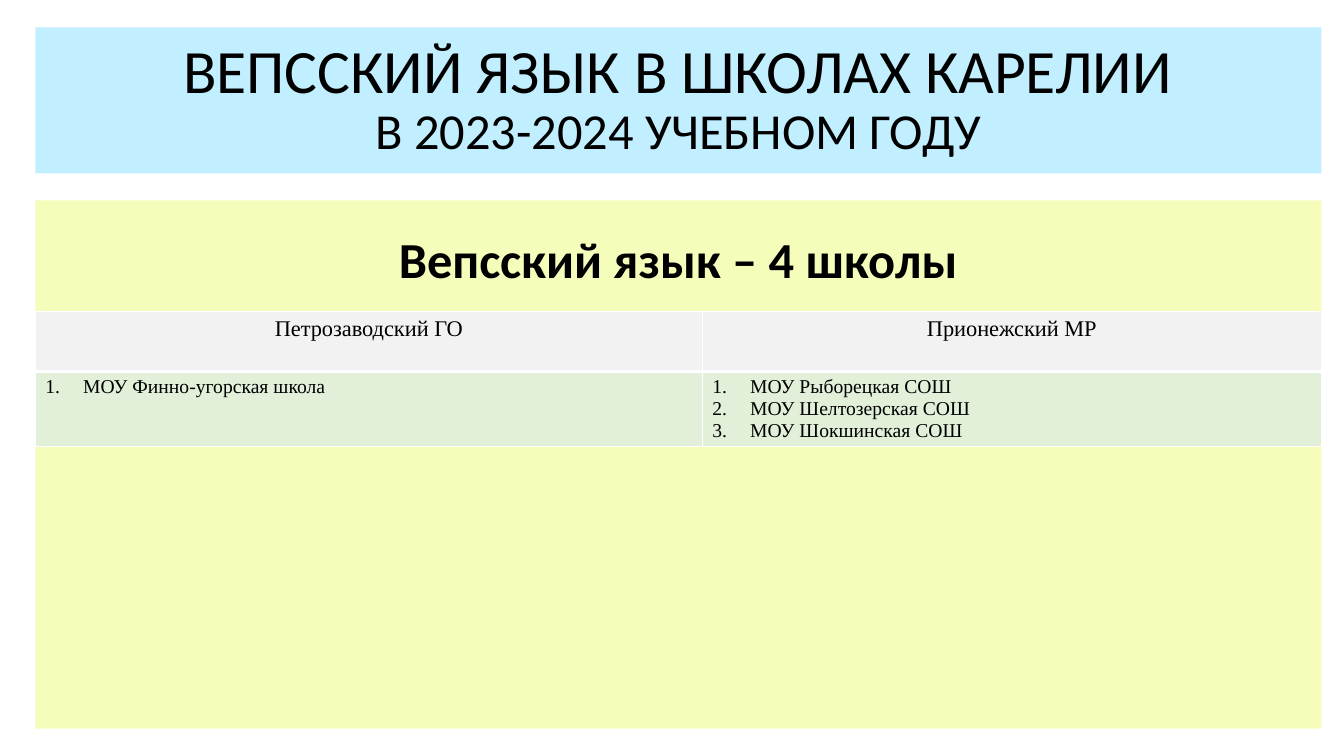
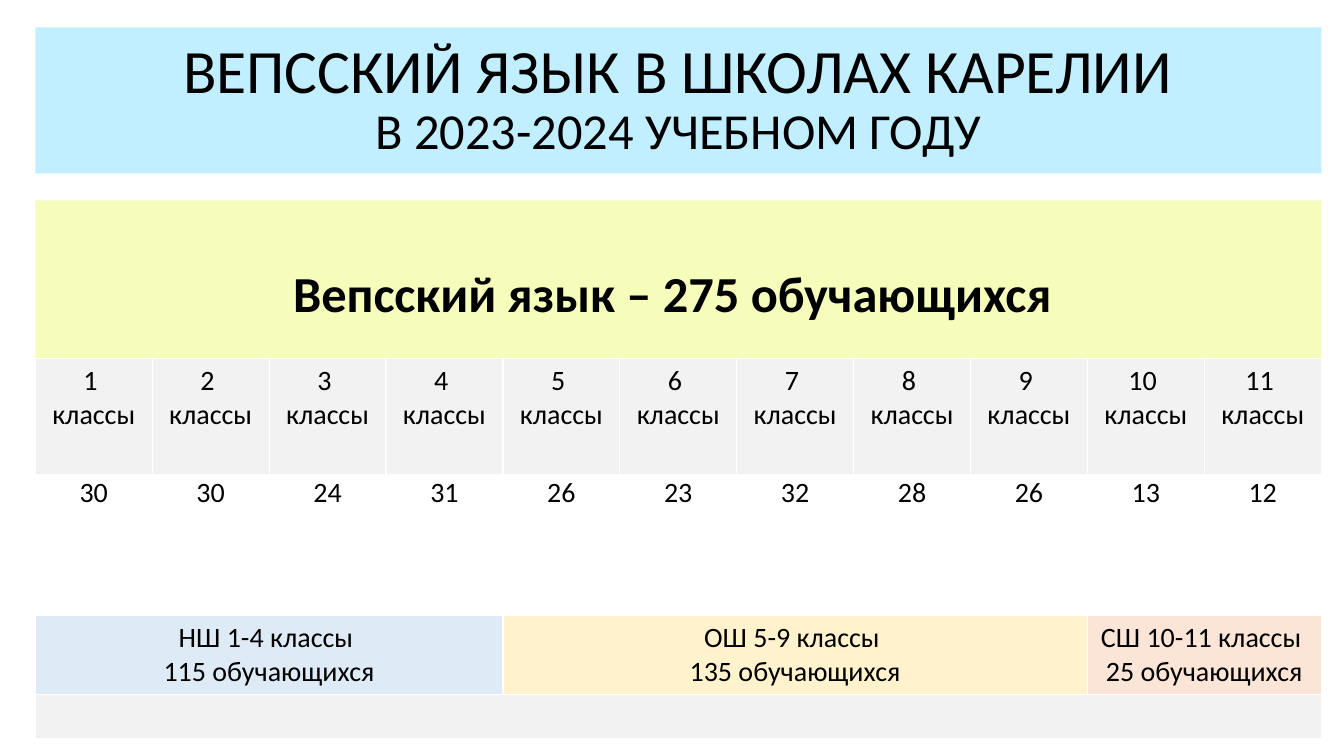
from pptx import Presentation
from pptx.dml.color import RGBColor
from pptx.enum.shapes import MSO_SHAPE
from pptx.enum.text import MSO_ANCHOR, MSO_AUTO_SIZE, PP_ALIGN
from pptx.oxml.ns import qn
from pptx.util import Cm, Pt
from lxml import etree

RECTANGLE = MSO_SHAPE.RECTANGLE
TOP, MIDDLE = MSO_ANCHOR.TOP, MSO_ANCHOR.MIDDLE
NO_AUTOFIT = MSO_AUTO_SIZE.NONE
LEFT, CENTER = PP_ALIGN.LEFT, PP_ALIGN.CENTER

BLACK = RGBColor(0x00, 0x00, 0x00)
WHITE = RGBColor(0xFF, 0xFF, 0xFF)
SKY = RGBColor(0xC1, 0xEF, 0xFF)
LEMON = RGBColor(0xF6, 0xFC, 0xBA)
GREY = RGBColor(0xF2, 0xF2, 0xF2)
GREEN = RGBColor(0xE2, 0xF0, 0xD9)
BLUE = RGBColor(0xDE, 0xEB, 0xF7)
AMBER = RGBColor(0xFF, 0xF2, 0xCC)
ROSE = RGBColor(0xFB, 0xE5, 0xD6)

SANS, SERIF = "Calibri", "Times New Roman"
MARGIN_LEFT, CONTENT_WIDTH = 0.89, 32.41
LIST_INDENT = Cm(0.95)
TITLE = "ВЕПССКИЙ ЯЗЫК В ШКОЛАХ КАРЕЛИИ\vВ 2023-2024 УЧЕБНОМ ГОДУ"


class Deck:
    """Shared style and the slide being built."""

    def __init__(self):
        self.presentation = Presentation()
        self.presentation.slide_width = Cm(33.87)
        self.presentation.slide_height = Cm(19.05)
        self.slide = None

    def new_slide(self, heading, heading_inset):
        layout = self.presentation.slide_layouts[5]
        self.slide = self.presentation.slides.add_slide(layout)
        self.title()
        self.panel(heading, heading_inset)

    def fill(self, target, color):
        target.fill.solid()
        target.fill.fore_color.rgb = color

    def format_run(self, run, size, font=SANS, bold=False):
        run.font.size = Pt(size)
        run.font.name = font
        run.font.bold = bold
        run.font.color.rgb = BLACK

    def title(self):
        title = self.slide.shapes.title
        title.left, title.top = Cm(MARGIN_LEFT), Cm(0.69)
        title.width, title.height = Cm(CONTENT_WIDTH), Cm(3.68)
        self.fill(title, SKY)
        frame = title.text_frame
        frame.text = TITLE
        frame.auto_size = NO_AUTOFIT
        frame.vertical_anchor = MIDDLE
        paragraph = frame.paragraphs[0]
        paragraph.alignment = CENTER
        paragraph.line_spacing = 0.9
        for run, size in zip(paragraph.runs, (44, 36)):
            self.format_run(run, size)

    def panel(self, heading, inset):
        panel = self.slide.shapes.add_shape(
            RECTANGLE, Cm(MARGIN_LEFT), Cm(5.05), Cm(CONTENT_WIDTH), Cm(13.31))
        panel.shadow.inherit = False
        panel.line.fill.background()
        self.fill(panel, LEMON)
        frame = panel.text_frame
        frame.text = heading
        frame.word_wrap = True
        frame.vertical_anchor = TOP
        frame.margin_top = Cm(inset)
        paragraph = frame.paragraphs[0]
        paragraph.alignment = CENTER
        paragraph.line_spacing = 0.9
        self.format_run(paragraph.runs[0], 36, bold=True)

    def table(self, top, widths, heights):
        frame = self.slide.shapes.add_table(
            len(heights), len(widths), Cm(MARGIN_LEFT), Cm(top),
            Cm(sum(widths)), Cm(sum(heights)))
        table = frame.table
        table.horz_banding = False
        for column, width in zip(table.columns, widths):
            column.width = Cm(width)
        for row, height in zip(table.rows, heights):
            row.height = Cm(height)
        for index, row in enumerate(table.rows):
            for cell in row.cells:
                self.borders(cell, bottom=3 if index == 0 else 1,
                             top=3 if index == 1 else 1)
        return table

    def borders(self, cell, top, bottom):
        properties = cell._tc.get_or_add_tcPr()
        sides = (("lnL", 1), ("lnR", 1), ("lnT", top), ("lnB", bottom))
        for position, (side, width) in enumerate(sides):
            line = etree.Element(qn(f"a:{side}"), w=str(Pt(width)))
            solid = etree.SubElement(line, qn("a:solidFill"))
            etree.SubElement(solid, qn("a:srgbClr"), val=str(WHITE))
            properties.insert(position, line)

    def cell(self, cell, text, color, size=20, font=SANS, numbered=False):
        self.fill(cell, color)
        cell.text_frame.text = text
        for paragraph in cell.text_frame.paragraphs:
            paragraph.alignment = LEFT if numbered else CENTER
            if numbered:
                self.number(paragraph)
            for run in paragraph.runs:
                self.format_run(run, size, font)

    def number(self, paragraph):
        properties = paragraph._p.get_or_add_pPr()
        properties.set("marL", str(LIST_INDENT))
        properties.set("indent", str(-LIST_INDENT))
        etree.SubElement(properties, qn("a:buAutoNum"), type="arabicPeriod")


def schools_slide(deck):
    deck.new_slide("Вепсский язык – 4 школы", 0.87)
    districts = (
        ("Петрозаводский ГО", "МОУ Финно-угорская школа"),
        ("Прионежский МР",
         "МОУ Рыборецкая СОШ\nМОУ Шелтозерская СОШ\nМОУ Шокшинская СОШ"),
    )
    table = deck.table(7.85, (16.81, 15.6), (1.51, 1.88))
    for column, (district, schools) in enumerate(districts):
        deck.cell(table.cell(0, column), district, GREY, 16, SERIF)
        deck.cell(table.cell(1, column), schools, GREEN, 14, SERIF, numbered=True)


def pupils_slide(deck):
    deck.new_slide("Вепсский язык – 275 обучающихся ", 1.72)
    pupils = (30, 30, 24, 31, 26, 23, 32, 28, 26, 13, 12)
    grades = len(pupils)
    table = deck.table(9.04, [CONTENT_WIDTH / grades] * grades,
                       (2.96, 3.51, 1.99, 1.12))

    # Pupils by grade
    for column, count in enumerate(pupils):
        deck.cell(table.cell(0, column), f"{column + 1} \nклассы", GREY)
        count_cell = table.cell(1, column)
        deck.cell(count_cell, str(count), WHITE)
        count_cell.margin_top = count_cell.margin_bottom = 0

    # Totals by school level
    levels = (("НШ", 1, 4, BLUE), ("ОШ", 5, 9, AMBER), ("СШ", 10, 11, ROSE))
    for level, first, last, color in levels:
        total_cell = table.cell(2, first - 1)
        total_cell.merge(table.cell(2, last - 1))
        total = sum(pupils[first - 1:last])
        deck.cell(total_cell,
                  f"{level} {first}-{last} классы \n{total} обучающихся", color)

    # Closing band
    closing_band = table.cell(3, 0)
    closing_band.merge(table.cell(3, grades - 1))
    deck.fill(closing_band, GREY)


def main():
    deck = Deck()
    schools_slide(deck)
    pupils_slide(deck)
    deck.presentation.save("out.pptx")


if __name__ == "__main__":
    main()
